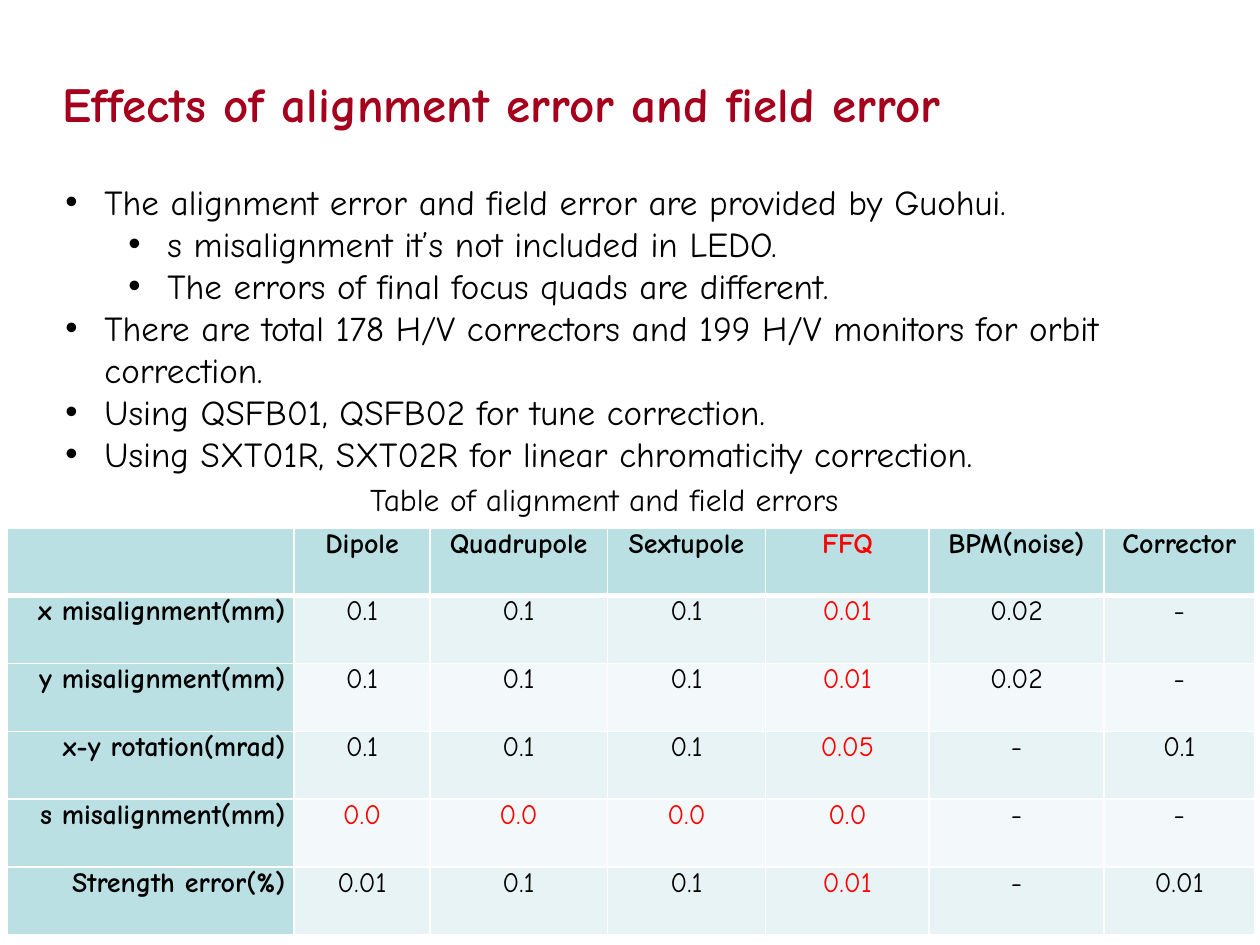
from lxml import etree
from pptx import Presentation
from pptx.dml.color import RGBColor
from pptx.enum.text import MSO_ANCHOR, MSO_AUTO_SIZE, PP_ALIGN
from pptx.oxml.ns import qn
from pptx.util import Inches, Pt

BOTTOM = MSO_ANCHOR.BOTTOM
GROW = MSO_AUTO_SIZE.SHAPE_TO_FIT_TEXT
LEFT, MID, RIGHT = PP_ALIGN.LEFT, PP_ALIGN.CENTER, PP_ALIGN.RIGHT
FONT = "Comic Neue"
WIDE, HIGH = Inches(10), Inches(7.5)
HUES = {
    "title": "A4001D", "text": "000000", "mark": "FF0000", "line": "FFFFFF",
    "head": "BBE0E3", "odd": "E7F3F4", "even": "F3F9FA",
}

TITLE = "Effects of alignment error and field error"
POINTS = [
    (0, "The alignment error and field error are provided by Guohui."),
    (1, "s misalignment it’s not included in LEDO."),
    (1, "The errors of final focus quads are different."),
    (0, "There are total 178 H/V correctors and 199 H/V monitors for orbit correction."),
    (0, "Using QSFB01, QSFB02 for tune correction."),
    (0, "Using SXT01R, SXT02R for linear chromaticity correction."),
]
LABEL = "Table of alignment and field errors"
ROWS = [
    ["", "Dipole", "Quadrupole", "Sextupole", "FFQ", "BPM(noise)", "Corrector"],
    ["x misalignment(mm)", "0.1", "0.1", "0.1", "0.01", "0.02", "-"],
    ["y misalignment(mm)", "0.1", "0.1", "0.1", "0.01", "0.02", "-"],
    ["x-y rotation(mrad)", "0.1", "0.1", "0.1", "0.05", "-", "0.1"],
    ["s misalignment(mm)", "0.0", "0.0", "0.0", "0.0", "-", "-"],
    ["Strength error(%)", "0.01", "0.1", "0.1", "0.01", "-", "0.01"],
]
SPANS = [2.28, 1.08, 1.41, 1.26, 1.3, 1.39, 1.2]
FFQ = 4


def scale(box):
    x, y, w, h = box
    return int(x * WIDE), int(y * HIGH), int(w * WIDE), int(h * HIGH)


def write(para, text, size, hue="text", bold=False, align=LEFT):
    para.alignment = align
    run = para.add_run()
    run.text = text
    font = run.font
    font.name, font.size, font.bold = FONT, Pt(size), bold
    font.color.rgb = RGBColor.from_string(HUES[hue])


def add_frame(slide, box, wrap=True):
    frame = slide.shapes.add_textbox(*scale(box)).text_frame
    frame.word_wrap = wrap
    return frame


def add_title(slide, box):
    frame = add_frame(slide, box)
    frame.vertical_anchor = BOTTOM
    frame.margin_left = frame.margin_right = 0
    frame.margin_top = frame.margin_bottom = 0
    write(frame.paragraphs[0], TITLE, 28, "title", True)


def add_points(slide, box):
    frame = add_frame(slide, box)
    frame.auto_size = GROW
    for i, (level, text) in enumerate(POINTS):
        para = frame.add_paragraph() if i else frame.paragraphs[0]
        para.level = level
        props = para._p.get_or_add_pPr()
        props.set("marL", str(Inches(0.31 + 0.5 * level)))
        props.set("indent", str(Inches(-0.31)))
        etree.SubElement(props, qn("a:buFont")).set("typeface", "Arial")
        etree.SubElement(props, qn("a:buChar")).set("char", "•")
        write(para, text, 20)


def add_label(slide, box):
    frame = add_frame(slide, box, False)
    frame.auto_size = GROW
    write(frame.paragraphs[0], LABEL, 18)


def add_edges(cell, widths):
    props = cell._tc.get_or_add_tcPr()
    for i, (side, width) in enumerate(zip("LRTB", widths)):
        line = etree.Element(qn(f"a:ln{side}"), w=str(Pt(width)))
        fill = etree.SubElement(line, qn("a:solidFill"))
        etree.SubElement(fill, qn("a:srgbClr")).set("val", HUES["line"])
        props.insert(i, line)


def fill_cell(cell, row, col, text):
    head = row == 0 or col == 0
    tone = "head" if head else ("odd" if row % 2 else "even")
    cell.fill.solid()
    cell.fill.fore_color.rgb = RGBColor.from_string(HUES[tone])
    cell.margin_left = cell.margin_right = Inches(0.07)
    cell.margin_top = cell.margin_bottom = 0
    add_edges(cell, (1, 1, 3 if row == 1 else 1, 3 if row == 0 else 1))
    if text:
        hue = "mark" if col == FFQ or text == "0.0" else "text"
        write(cell.text_frame.paragraphs[0], text, 16, hue, head, MID if col else RIGHT)


def add_errors(slide, box):
    x, y, w, h = scale(box)
    table = slide.shapes.add_table(len(ROWS), len(SPANS), x, y, w, h).table
    for col, span in zip(table.columns, SPANS):
        col.width = int(w * span / sum(SPANS))
    for i, row in enumerate(ROWS):
        for j, text in enumerate(row):
            fill_cell(table.cell(i, j), i, j, text)


def main():
    deck = Presentation()
    deck.slide_width, deck.slide_height = WIDE, HIGH
    slide = deck.slides.add_slide(deck.slide_layouts[6])
    add_title(slide, (0.05, 0.05 / 7.5, 0.9, 1 / 7.5))
    add_errors(slide, (0.006, 4.19 / 7.5, 0.99, 3.23 / 7.5))
    add_points(slide, (0.042, 1.38 / 7.5, 0.908, 2.46 / 7.5))
    add_label(slide, (0.284, 3.76 / 7.5, 0.434, 0.4 / 7.5))
    deck.save("out.pptx")


if __name__ == "__main__":
    main()
